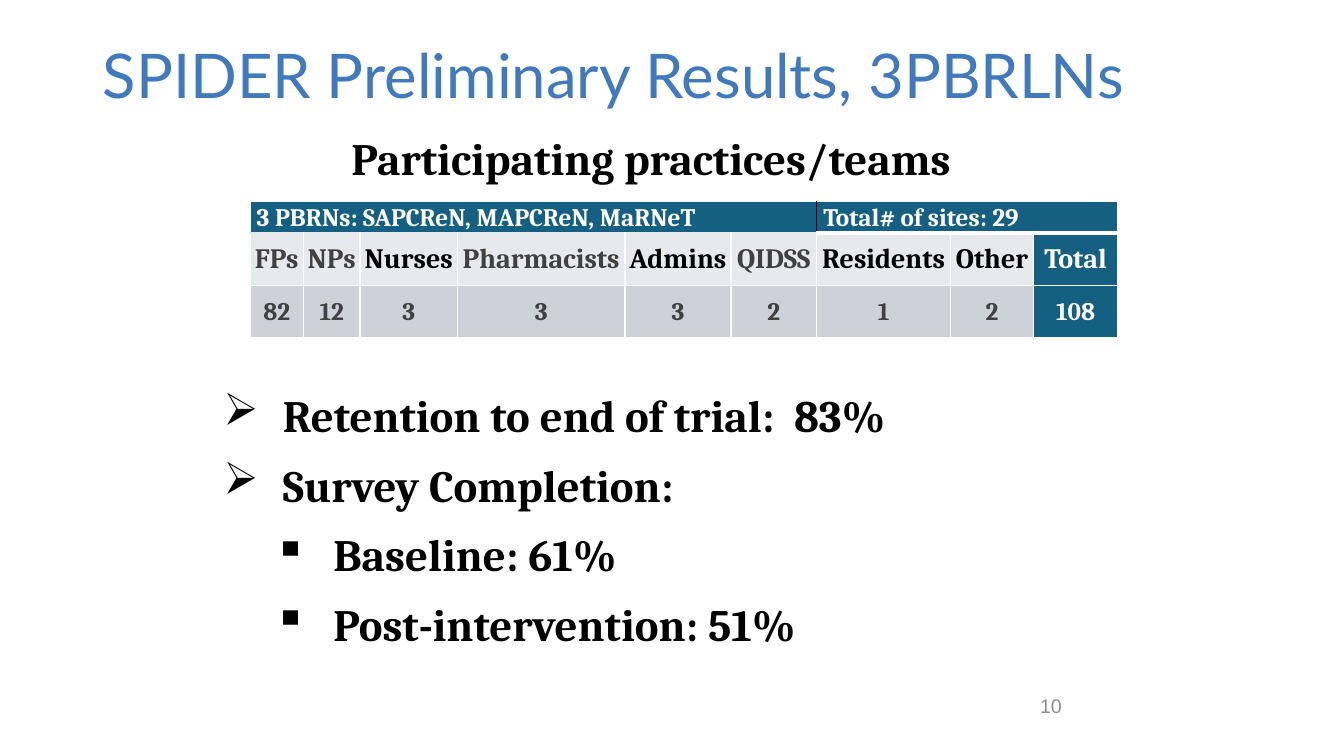
"""Build the slide of preliminary trial results."""
import pptx
import pptx.util
import pptx.dml.color
import pptx.enum.text
import pptx.oxml
import pptx.oxml.ns
import lxml.etree

Cm = pptx.util.Cm
Pt = pptx.util.Pt
RGBColor = pptx.dml.color.RGBColor
Align = pptx.enum.text.PP_ALIGN
Anchor = pptx.enum.text.MSO_ANCHOR

BLUE = RGBColor(0x41, 0x79, 0xBD)
TEAL = RGBColor(0x15, 0x60, 0x82)
PALE = RGBColor(0xE7, 0xEA, 0xED)
MIST = RGBColor(0xCC, 0xD2, 0xD8)
GRAY = RGBColor(0x8C, 0x8C, 0x8C)
DARK = RGBColor(0x41, 0x41, 0x41)
BLACK = RGBColor(0, 0, 0)
WHITE = RGBColor(255, 255, 255)

HEADS = ["FPs", "NPs", "Nurses", "Pharmacists", "Admins", "QIDSS",
         "Residents", "Other", "Total"]
COUNTS = ["82", "12", "3", "3", "3", "2", "1", "2", "108"]
WIDTHS = [1.35, 1.42, 2.46, 4.22, 2.67, 2.16, 3.38, 2.08, 2.13]
HEIGHTS = [0.79, 1.32, 1.32]
STRONG = {"Nurses", "Admins", "Residents", "Other"}
SPLIT = 6
POINTS = [("Retention to end of trial:  83%", 0), ("Survey Completion:", 0),
          ("Baseline: 61%", 1), ("Post-intervention: 51%", 1)]


def put(item, values):
    """Set each named value on the item."""
    for name, value in values.items():
        setattr(item, name, value)


class Board:
    """Hold the style and the current slide."""

    def __init__(self, slide):
        """Keep the slide and the shared formats."""
        self.slide = slide
        self.serif = {"name": "Cambria", "bold": True}
        self.space = Pt(5.6)

    def letter(self, par, text, size, color, look):
        """Put one formatted run in a paragraph."""
        run = par.add_run()
        run.text = text
        put(run.font, {"size": Pt(size), **look})
        run.font.color.rgb = color

    def box(self, left, top, width, height):
        """Add a wrapping text frame."""
        frame = self.slide.shapes.add_textbox(
            Cm(left), Cm(top), Cm(width), Cm(height)).text_frame
        put(frame, {"word_wrap": True, "vertical_anchor": Anchor.TOP})
        return frame

    def label(self, place, text, size, color, look, form):
        """Add a text of one line."""
        par = self.box(*place).paragraphs[0]
        put(par, form)
        self.letter(par, text, size, color, look)

    def bullets(self, place, points):
        """Add a list of two levels."""
        frame = self.box(*place)
        for row, (text, level) in enumerate(points):
            par = frame.add_paragraph() if row else frame.paragraphs[0]
            put(par, {"level": level, "space_after": self.space})
            if row:
                par.space_before = self.space
            props = par._p.get_or_add_pPr()
            props.set("marL", str(Cm(1.5 + 1.27 * level)))
            props.set("indent", str(Cm(-1.5)))
            mark = lxml.etree.SubElement(props, pptx.oxml.ns.qn("a:buChar"))
            mark.set("char", "➢▪"[level])
            self.letter(par, text, 32, BLACK, self.serif)

    def edge(self, cell, side, color, width):
        """Draw one border of a cell."""
        cell._tc.get_or_add_tcPr().append(pptx.oxml.parse_xml(
            f'<a:ln{side} {pptx.oxml.ns.nsdecls("a")} w="{Pt(width)}">'
            f'<a:solidFill><a:srgbClr val="{color}"/></a:solidFill>'
            f'</a:ln{side}>'))

    def cell(self, cell, text, size, color, fill, form):
        """Fill and letter one cell."""
        put(cell, {"margin_left": Cm(0.03), "margin_right": Cm(0.03),
                   "margin_top": Cm(0.03), "margin_bottom": 0,
                   "vertical_anchor": Anchor.MIDDLE, **form})
        cell.fill.solid()
        cell.fill.fore_color.rgb = fill
        par = cell.text_frame.paragraphs[0]
        par.alignment = Align.LEFT if cell.is_merge_origin else Align.CENTER
        self.letter(par, text, size, color, self.serif)

    def lines(self, grid, row, col):
        """Draw the four borders of a cell."""
        seam = (PALE, 1) if col < SPLIT else (WHITE, 3)
        plain = (WHITE, 1)
        split = (BLACK, 0.5)
        sides = {"L": split if row == 0 and col == SPLIT else plain,
                 "R": split if row == 0 and col < SPLIT else plain,
                 "T": seam if row == 1 else plain,
                 "B": seam if row == 0 else plain}
        for side, (color, width) in sides.items():
            self.edge(grid.cell(row, col), side, color, width)

    def table(self, left, top):
        """Add the table of practices."""
        grid = self.slide.shapes.add_table(
            len(HEIGHTS), len(WIDTHS), Cm(left), Cm(top),
            Cm(sum(WIDTHS)), Cm(sum(HEIGHTS))).table
        put(grid, {"first_row": False, "horz_banding": False})
        for col, width in zip(grid.columns, WIDTHS):
            col.width = Cm(width)
        for row, height in zip(grid.rows, HEIGHTS):
            row.height = Cm(height)
        for row in range(len(HEIGHTS)):
            for col in range(len(WIDTHS)):
                self.lines(grid, row, col)
        last = len(WIDTHS) - 1
        for start, end, text, anchor in [
                (0, SPLIT - 1, "3 PBRNs: SAPCReN, MAPCReN, MaRNeT",
                 Anchor.BOTTOM),
                (SPLIT, last, "Total# of sites: 29", Anchor.MIDDLE)]:
            head = grid.cell(0, start)
            head.merge(grid.cell(0, end))
            self.cell(head, text, 18, WHITE, TEAL,
                      {"margin_left": Cm(0.17), "vertical_anchor": anchor})
        for row, texts, size, fill in [(1, HEADS, 20, PALE),
                                       (2, COUNTS, 18, MIST)]:
            for col, text in enumerate(texts):
                color = BLACK if text in STRONG else DARK
                pair = (WHITE, TEAL) if col == last else (color, fill)
                self.cell(grid.cell(row, col), text, size, *pair, {})


def main():
    """Make and save the deck."""
    deck = pptx.Presentation()
    put(deck, {"slide_width": Cm(33.87), "slide_height": Cm(19.05)})
    board = Board(deck.slides.add_slide(deck.slide_layouts[6]))
    board.label((2.34, 1.02, 29.21, 3.68),
                "SPIDER Preliminary Results, 3PBRLNs", 44, BLUE,
                {"name": "Lato"}, {"line_spacing": 0.9})
    board.label((5.38, 3.18, 22.07, 1.6), "Participating practices/teams",
                32, BLACK, board.serif, {"alignment": Align.CENTER})
    board.table(6.3, 5.08)
    board.bullets((5.38, 9.65, 22.07, 7.2), POINTS)
    board.label((25.96, 17.35, 7.9, 1.32), "10", 14, GRAY,
                {"name": "Arial"}, {})
    deck.save("out.pptx")


if __name__ == "__main__":
    main()
